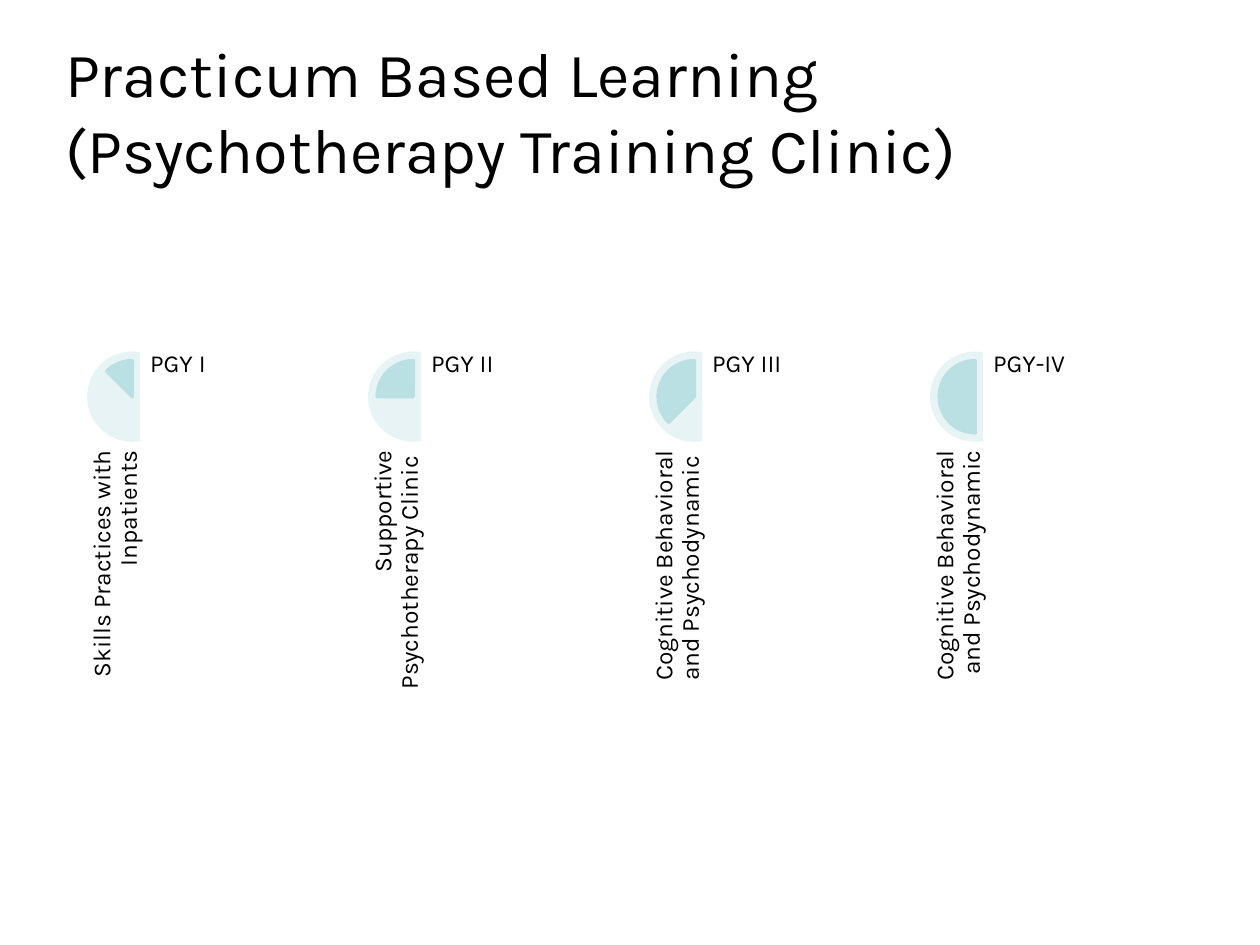
from dataclasses import dataclass

from pptx import Presentation
from pptx.dml.color import RGBColor
from pptx.enum import shapes as sh, text as tx
from pptx.util import Pt


@dataclass(frozen=True)
class Theme:
    font: str = "Karla"
    ink: RGBColor = RGBColor(0, 0, 0)
    pale: RGBColor = RGBColor(0xE7, 0xF3, 0xF4)
    teal: RGBColor = RGBColor(0xBB, 0xE0, 0xE3)
    head: int = 36
    body: int = 14


THEME = Theme()
YEARS = [
    ("PGY I", "Skills Practices with Inpatients"),
    ("PGY II", "Supportive Psychotherapy Clinic "),
    ("PGY III", "Cognitive Behavioral and Psychodynamic "),
    ("PGY-IV", "Cognitive Behavioral and Psychodynamic"),
]
LEFT, TOP, STEP = 49.8, 200.9, 160.56
DISC, GAP = 51.6, 5.2


def style(para, size, align):
    para.alignment = align
    para.font.name = THEME.font
    para.font.size = Pt(size)
    para.font.color.rgb = THEME.ink


def add_title(slide, words):
    title = slide.shapes.title
    title.left, title.top, title.width, title.height = map(Pt, (30, 18, 660, 90))
    frame = title.text_frame
    frame.text = words
    frame.auto_size = tx.MSO_AUTO_SIZE.NONE
    frame.vertical_anchor = tx.MSO_ANCHOR.MIDDLE
    style(frame.paragraphs[0], THEME.head, tx.PP_ALIGN.LEFT)


def add_arc(group, kind, box, turns, fill, line=0):
    arc = group.shapes.add_shape(kind, *map(Pt, box))
    arc.adjustments[0], arc.adjustments[1] = turns
    arc.shadow.inherit = False
    arc.fill.solid()
    arc.fill.fore_color.rgb = fill
    if line:
        arc.line.color.rgb = fill
        arc.line.width = Pt(line)
    else:
        arc.line.fill.background()


def add_label(group, words, box, align=tx.PP_ALIGN.LEFT,
              anchor=tx.MSO_ANCHOR.TOP, turn=0):
    label = group.shapes.add_textbox(*map(Pt, box))
    label.rotation = turn
    frame = label.text_frame
    frame.word_wrap = True
    frame.vertical_anchor = anchor
    frame.margin_left = frame.margin_right = 0
    frame.margin_top = frame.margin_bottom = 0
    frame.text = words
    para = frame.paragraphs[0]
    para.line_spacing = 0.9
    style(para, THEME.body, align)


def add_year(group, index, name, topic):
    x = LEFT + index * STEP
    core = DISC - 2 * GAP
    add_arc(group, sh.MSO_SHAPE.CHORD, (x, TOP, DISC, DISC), (48, 168), THEME.pale)
    add_arc(group, sh.MSO_SHAPE.PIE, (x + GAP, TOP + GAP, core, core),
            (135 - 27 * index, 162), THEME.teal, 2)
    add_label(group, topic, (x - 59, 316.8, 149.8, 31),
              tx.PP_ALIGN.RIGHT, tx.MSO_ANCHOR.BOTTOM, 270)
    add_label(group, name, (x + 36, TOP, 103, 206))


def main():
    deck = Presentation()
    deck.slide_width, deck.slide_height = Pt(720), Pt(540)
    slide = deck.slides.add_slide(deck.slide_layouts[5])
    add_title(slide, "Practicum Based Learning (Psychotherapy Training Clinic)")
    group = slide.shapes.add_group_shape()
    for index, (name, topic) in enumerate(YEARS):
        add_year(group, index, name, topic)
    deck.save("out.pptx")


if __name__ == "__main__":
    main()
